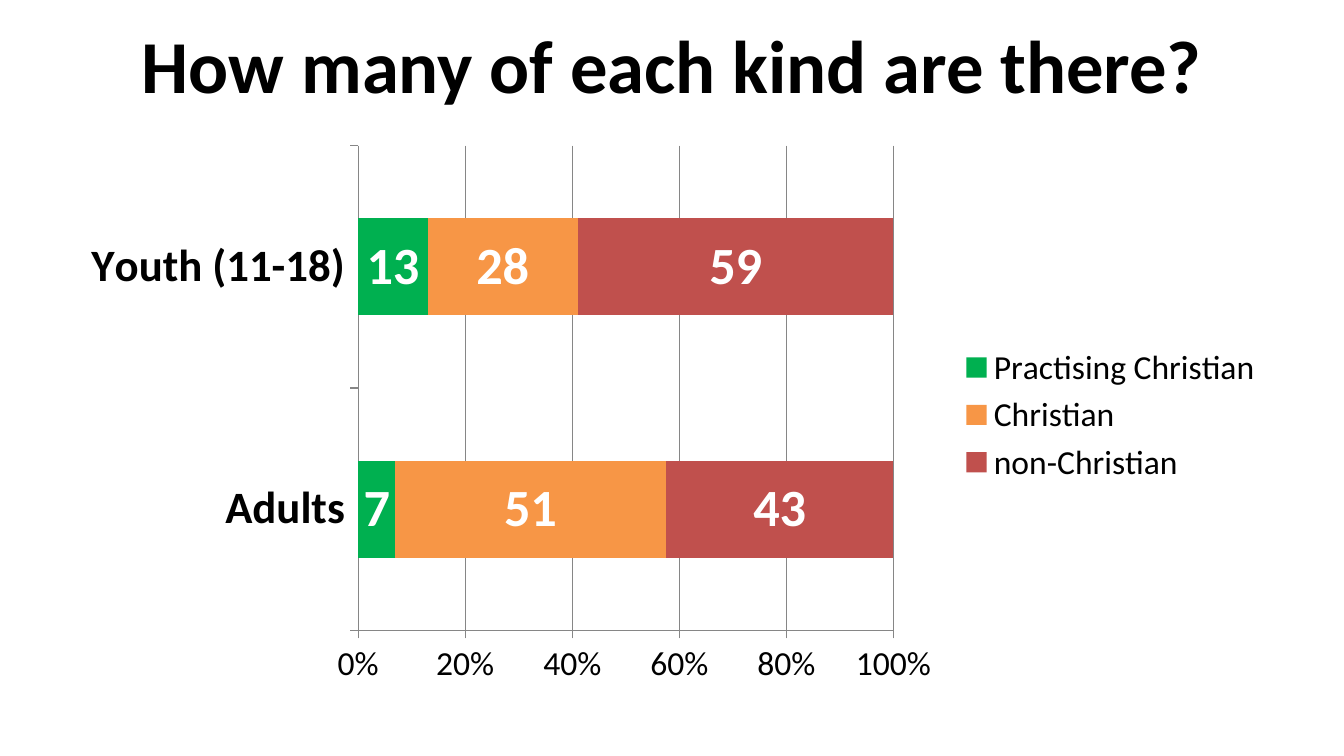
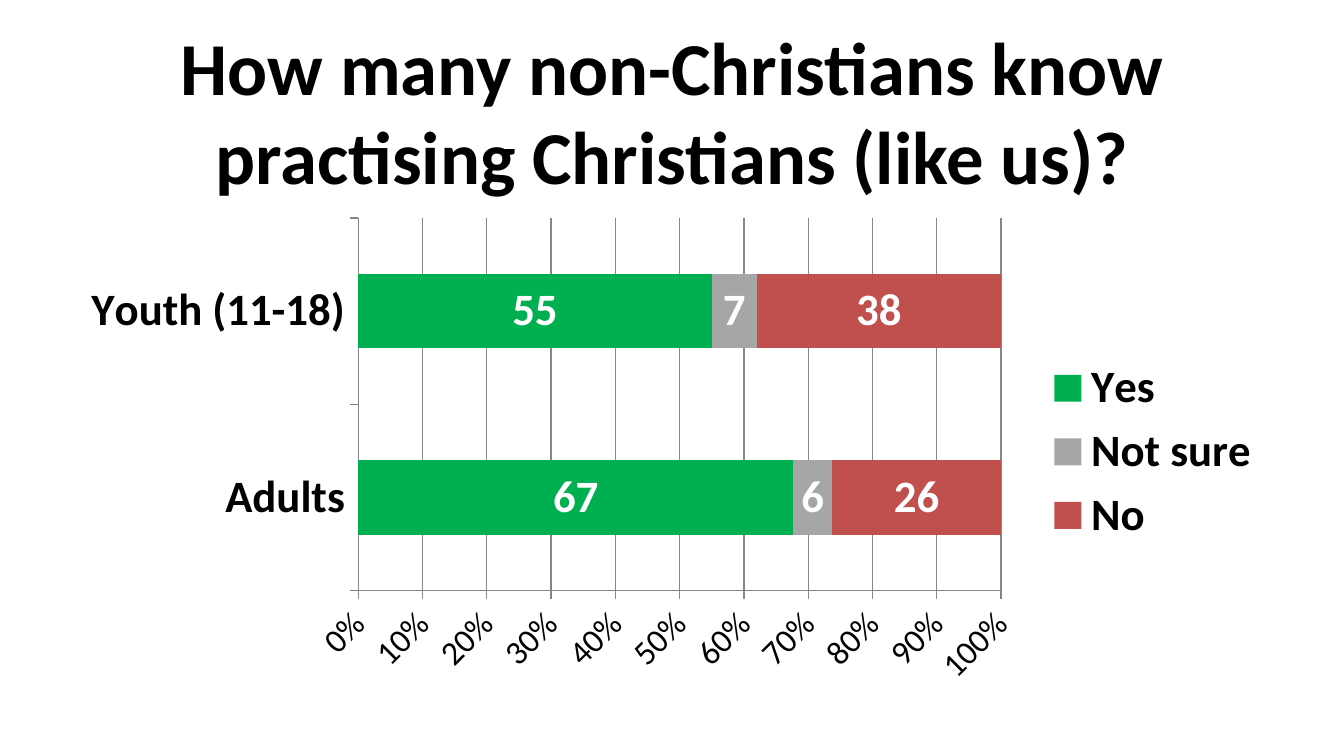
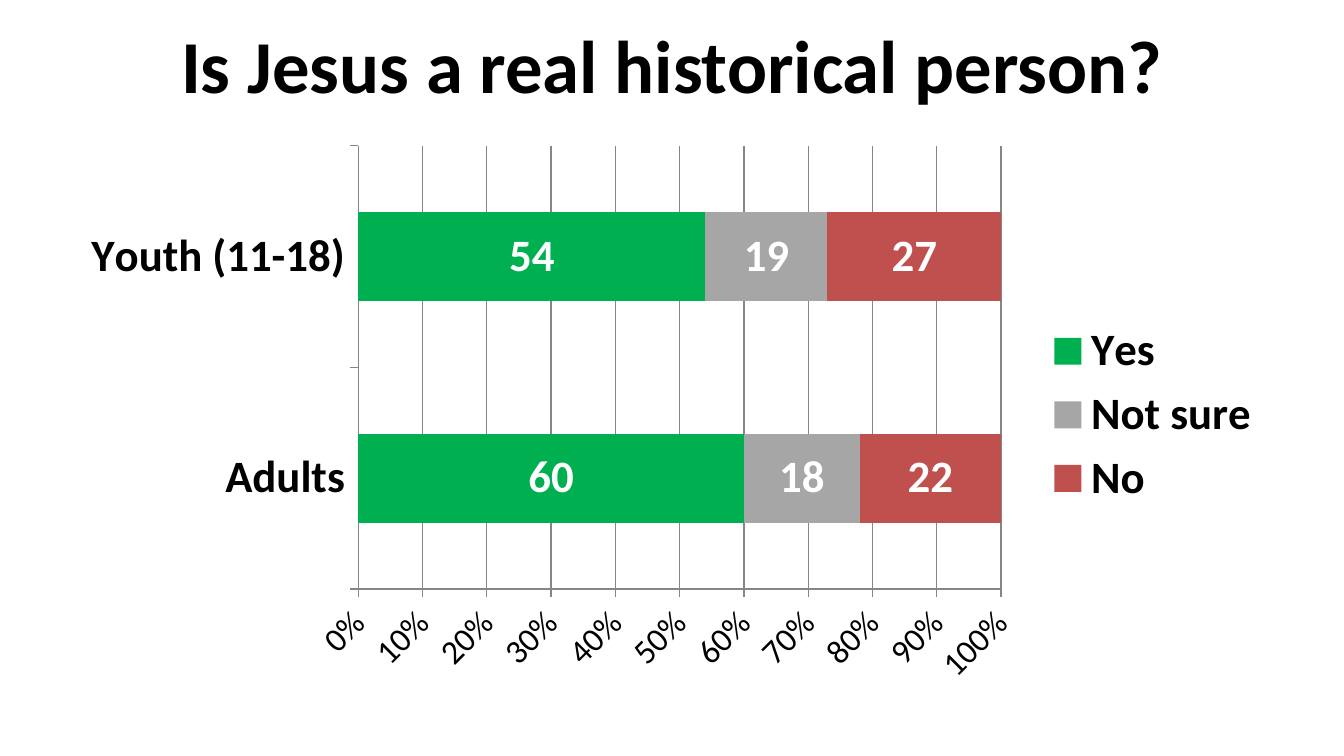
from pptx import Presentation
from pptx.chart.data import CategoryChartData
from pptx.dml.color import RGBColor
from pptx.enum.chart import XL_CHART_TYPE, XL_LABEL_POSITION, XL_LEGEND_POSITION, XL_TICK_MARK
from pptx.enum.text import MSO_ANCHOR, PP_ALIGN
from pptx.util import Inches, Pt

STACKED_BARS = XL_CHART_TYPE.BAR_STACKED_100
LABEL_CENTER = XL_LABEL_POSITION.CENTER
LEGEND_RIGHT = XL_LEGEND_POSITION.RIGHT
TICK_OUTSIDE = XL_TICK_MARK.OUTSIDE
MIDDLE = MSO_ANCHOR.MIDDLE
CENTER = PP_ALIGN.CENTER

COLUMN, ROW = 0.5, 0.1  # grid unit in inches
COLUMNS, ROWS = 20, 56.25
CHART_BOTTOM = 51.75

FONT = "Calibri"
BLACK, WHITE, LINE_GREY = "000000", "FFFFFF", "868686"
GREEN, ORANGE, GREY, RED = "00B050", "F79646", "A6A6A6", "C0504D"

AGE_GROUPS = ["Adults", "Youth (11-18)"]
KIND_COLOURS = {"Practising Christian": GREEN, "Christian": ORANGE, "non-Christian": RED}
ANSWER_COLOURS = {"Yes": GREEN, "Not sure": GREY, "No": RED}


def colour(hex_string):
    return RGBColor.from_string(hex_string)


def style_font(font, size, bold=False, fill=BLACK):
    font.name = FONT
    font.size = Pt(size)
    font.bold = bold
    font.color.rgb = colour(fill)


def write_text(frame, text, align=CENTER, **font_format):
    """Write one paragraph, with a line break at each newline."""
    para = frame.paragraphs[0]
    para.alignment = align
    for number, line in enumerate(text.split("\n")):
        if number:
            para.add_line_break()
        span = para.add_run()
        span.text = line
        style_font(span.font, **font_format)


def grid_box(left, top, width, height):
    """Turn columns and rows into slide lengths."""
    return (Inches(left * COLUMN), Inches(top * ROW),
            Inches(width * COLUMN), Inches(height * ROW))


class SurveyDeck:
    """Holds the deck and its current page, and adds styled elements to it."""

    def __init__(self):
        self.deck = Presentation()
        _, _, self.deck.slide_width, self.deck.slide_height = grid_box(0, 0, COLUMNS, ROWS)
        self.page = None

    def add_page(self):
        self.page = self.deck.slides.add_slide(self.deck.slide_layouts[6])
        background = self.page.background.fill
        background.solid()
        background.fore_color.rgb = colour(WHITE)

    def add_title(self, text, margin=1, height=9.4):
        box = self.page.shapes.add_textbox(*grid_box(margin, 0, COLUMNS - 2 * margin, height))
        frame = box.text_frame
        frame.word_wrap = True
        frame.vertical_anchor = MIDDLE
        write_text(frame, text, size=40, bold=True)

    def add_survey_chart(self, colours, values, top=10, label_size=24,
                         legend_size=24, legend_bold=True):
        data = CategoryChartData()
        data.categories = AGE_GROUPS
        for name, shares in zip(colours, values):
            data.add_series(name, shares)
        place = grid_box(1, top, COLUMNS - 2, CHART_BOTTOM - top)
        chart = self.page.shapes.add_chart(STACKED_BARS, *place, data).chart
        chart.has_title = False
        style_font(chart.font, 18)

        plot = chart.plots[0]
        plot.gap_width = 150
        plot.overlap = 100
        plot.vary_by_categories = False
        for series, fill in zip(plot.series, colours.values()):
            series.format.fill.solid()
            series.format.fill.fore_color.rgb = colour(fill)
            labels = series.data_labels
            labels.show_value = True
            labels.position = LABEL_CENTER
            style_font(labels.font, label_size, bold=True, fill=WHITE)

        self.style_axes(chart)
        chart.has_legend = True
        chart.legend.position = LEGEND_RIGHT
        chart.legend.include_in_layout = False
        style_font(chart.legend.font, legend_size, legend_bold)

    def style_axes(self, chart):
        groups, percents = chart.category_axis, chart.value_axis
        groups.has_major_gridlines = False
        percents.has_major_gridlines = True
        percents.tick_labels.number_format = "0%"
        percents.tick_labels.number_format_is_linked = False
        style_font(groups.tick_labels.font, 24, bold=True)
        style_font(percents.tick_labels.font, 18)
        for axis in (groups, percents):
            axis.major_tick_mark = TICK_OUTSIDE
        for part in (groups, percents, percents.major_gridlines):
            part.format.line.color.rgb = colour(LINE_GREY)
            part.format.line.width = Pt(0.75)

    def save(self):
        self.deck.save("out.pptx")


def main():
    survey = SurveyDeck()

    survey.add_page()
    survey.add_title("How many of each kind are there?")
    survey.add_survey_chart(KIND_COLOURS, [(7, 13), (51, 28), (43, 59)],
                            label_size=28, legend_size=18, legend_bold=False)

    survey.add_page()
    survey.add_title("How many non-Christians know\npractising Christians (like us)?",
                     margin=0, height=16.4)
    survey.add_survey_chart(ANSWER_COLOURS, [(67, 55), (6, 7), (26, 38)], top=15.5)

    survey.add_page()
    survey.add_title("Is Jesus a real historical person?")
    survey.add_survey_chart(ANSWER_COLOURS, [(60, 54), (18, 19), (22, 27)])

    survey.save()


if __name__ == "__main__":
    main()
